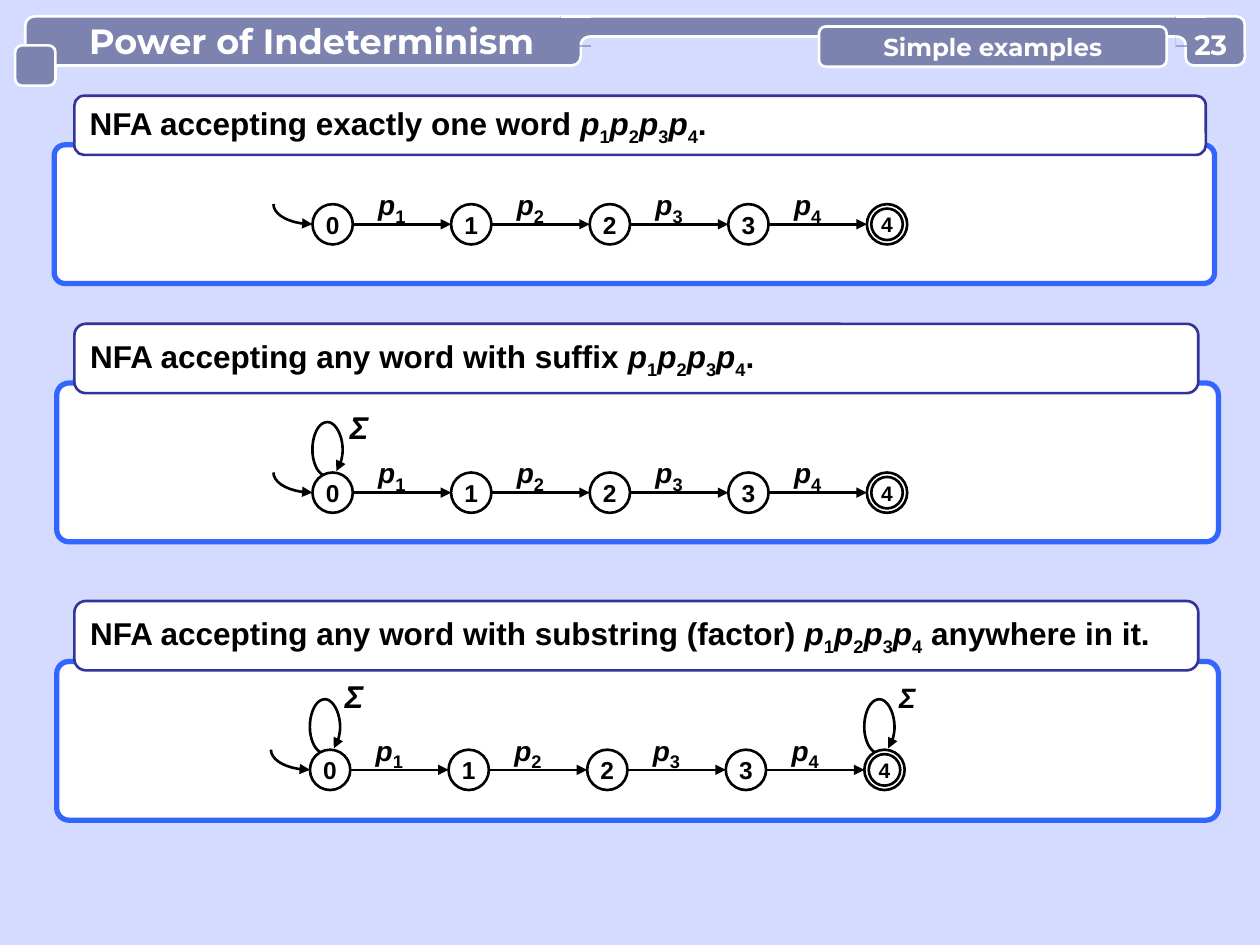
from lxml.etree import SubElement
from pptx import Presentation
from pptx.dml.color import RGBColor
from pptx.enum.shapes import MSO_CONNECTOR, MSO_SHAPE
from pptx.enum.text import MSO_ANCHOR, PP_ALIGN
from pptx.oxml.ns import qn
from pptx.util import Inches, Pt

BLACK = RGBColor(0x00, 0x00, 0x00)
WHITE = RGBColor(0xFF, 0xFF, 0xFF)
PALE = RGBColor(0xD5, 0xDA, 0xFF)
SLATE = RGBColor(0x7D, 0x83, 0xAF)
BLUE = RGBColor(0x33, 0x66, 0xFF)
NAVY = RGBColor(0x33, 0x33, 0x99)

BODY = {"name": "Arial", "bold": True, "color": BLACK}
HEAD = {"name": "Montserrat", "bold": True, "color": WHITE}
TIGHT = {"margin_left": 0, "margin_top": 0, "margin_right": 0, "margin_bottom": 0}
MIDDLE = {"vertical_anchor": MSO_ANCHOR.MIDDLE, "word_wrap": False}

RADIUS = 0.16
STEP = 1.1
STATES = 5
ENTRY = [(-0.16, 0), (-0.33, 0), (-0.47, -0.07), (-0.47, -0.16)]
LOOP = [(0.03, -0.17), (0.06, -0.21), (0.08, -0.28), (0.08, -0.34),
        (0.08, -0.46), (0.02, -0.56), (-0.04, -0.56),
        (-0.11, -0.56), (-0.16, -0.46), (-0.16, -0.34),
        (-0.16, -0.23), (-0.11, -0.13), (-0.04, -0.13)]


def format_all(target, values):
    for key, value in values.items():
        setattr(target, key, value)


def write(frame, runs, style, size, align=PP_ALIGN.CENTER, **layout):
    format_all(frame, layout)
    line = frame.paragraphs[0]
    line.alignment = align
    for text, kind in runs:
        run = line.add_run()
        run.text = text
        values = {**style, "size": Pt(size), "italic": kind == "var"}
        run.font.color.rgb = values.pop("color")
        format_all(run.font, values)
        if kind == "sub":
            run.font.size = Pt(18)
            run._r.get_or_add_rPr().set("baseline", "-25000")


def stroke(line, color, width=1.5):
    line.color.rgb = color
    line.width = Pt(width)


def arrow(shape, end):
    tip = SubElement(shape.line._get_or_add_ln(), qn(f"a:{end}"))
    tip.set("type", "triangle")


def block(host, kind, box, fill, edge=None, width=1.5, round=None):
    shape = host.add_shape(kind, *map(Inches, box))
    shape.shadow.inherit = False
    shape.fill.solid()
    shape.fill.fore_color.rgb = fill
    if edge is None:
        shape.line.fill.background()
    else:
        stroke(shape.line, edge, width)
    if round is not None:
        shape.adjustments[0] = round
    return shape


def link(host, start, end, color):
    line = host.add_connector(MSO_CONNECTOR.STRAIGHT, *map(Inches, start + end))
    stroke(line.line, color)
    SubElement(line.element.spPr, qn("a:effectLst"))
    return line


def bezier(points, count=10):
    result = [points[0]]
    for first in range(0, len(points) - 1, 3):
        a, b, c, d = points[first:first + 4]
        for n in range(1, count + 1):
            t = n / count
            u = 1 - t
            result.append(tuple(
                u**3 * a[k] + 3 * u * u * t * b[k] + 3 * u * t * t * c[k] + t**3 * d[k]
                for k in (0, 1)))
    return result


def outline(host, points, close=False):
    spots = [(Inches(x), Inches(y)) for x, y in points]
    pen = host.build_freeform(*spots[0])
    pen.add_line_segments(spots[1:], close=close)
    shape = pen.convert_to_shape()
    shape.shadow.inherit = False
    return shape


def curve(host, points, x, y, color):
    shape = outline(host, bezier([(x + dx, y + dy) for dx, dy in points]))
    shape.fill.background()
    stroke(shape.line, color)
    return shape


def label(host, box, runs, size):
    area = host.add_textbox(*map(Inches, box))
    write(area.text_frame, runs, BODY, size, word_wrap=True, **TIGHT)


def state(host, x, y, name, final):
    def disc(room, r):
        return block(room, MSO_SHAPE.OVAL, (x - r, y - r, 2 * r, 2 * r), WHITE, BLACK)

    if final:
        pair = host.add_group_shape().shapes
        disc(pair, RADIUS)
        shape = disc(pair, 0.125)
    else:
        shape = disc(host, RADIUS)
    write(shape.text_frame, [(name, "")], BODY, 12 if final else 14, **MIDDLE)


def chain(host, x, y, loops):
    arrow(curve(host, ENTRY, x, y, BLACK), "headEnd")
    for place, dx, dy, size in loops:
        spot = x + place * STEP
        arrow(curve(host, LOOP, spot, y, BLACK), "headEnd")
        label(host, (spot + dx - 0.16, y + dy - 0.15, 0.32, 0.3), [("Σ", "var")], size)
    for n in range(STATES):
        spot = x + n * STEP
        final = n == STATES - 1
        if not final:
            label(host, (spot + 0.31, y - 0.32, 0.32, 0.32),
                  [("p", "var"), (str(n + 1), "sub")], 16)
            line = link(host, (spot + RADIUS, y), (spot + STEP - RADIUS, y), BLACK)
            arrow(line, "tailEnd")
        state(host, spot, y, str(n), final)


def scene(host, panel, bar, lead, tail, start, loops):
    block(host, MSO_SHAPE.ROUNDED_RECTANGLE, panel, WHITE, BLUE, 3, 0.077)
    head = block(host, MSO_SHAPE.ROUNDED_RECTANGLE, bar, WHITE, NAVY, round=0.165)
    word = [part for n in range(1, STATES) for part in (("p", "var"), (str(n), "sub"))]
    write(head.text_frame, [(lead, ""), *word, (tail, "")], BODY, 18,
          PP_ALIGN.LEFT, **MIDDLE)
    chain(host, *start, loops)


def joint(host, x, y, side):
    group = host.add_group_shape().shapes
    inner = x - 0.24 * side
    block(group, MSO_SHAPE.RECTANGLE, (min(x, inner), y, 0.24, 0.24), SLATE)
    link(group, (inner, y), (x, y), WHITE)
    bend = [(0, 0.16), (-0.05 * side, 0.16), (-0.08 * side, 0.19), (-0.08 * side, 0.23)]
    wedge = bezier([(x + dx, y + dy) for dx, dy in bend]) + [(x, y + 0.23)]
    patch = outline(group, wedge, close=True)
    patch.fill.solid()
    patch.fill.fore_color.rgb = PALE
    patch.line.fill.background()
    curve(group, bend, x, y, WHITE)


def banner(slide, x, y):
    host = slide.shapes

    def tab(box, round=0.17):
        left, top, width, height = box
        return block(host, MSO_SHAPE.ROUNDED_RECTANGLE,
                     (x + left, y + top, width, height), SLATE, WHITE, round=round)

    plate = tab((0, 0, 4.41, 0.39), 0.188)
    title = host.title
    plate.element.addnext(title.element)
    place = zip(("left", "top", "width", "height"),
                map(Inches, (x + 0.14, y, 4.27, 0.39)))
    format_all(title, dict(place))
    write(title.text_frame, [("Power of Indeterminism", "")], HEAD, 20, **MIDDLE)
    tab((4.41, 0, 4.88, 0.16), 0.5)
    joint(host, x + 4.49, y, 1)
    tab((-0.08, 0.23, 0.32, 0.32))
    tab((9.21, 0, 0.47, 0.39))
    joint(host, x + 9.13, y, -1)
    topic = tab((6.3, 0.08, 2.76, 0.32))
    write(topic.text_frame, [("Simple examples", "")], HEAD, 14, **MIDDLE)
    page = host.add_textbox(*map(Inches, (x + 9.21, y + 0.09, 0.4, 0.27)))
    write(page.text_frame, [("23", "")], HEAD, 16, **TIGHT, **MIDDLE)


def main():
    deck = Presentation()
    deck.slide_width, deck.slide_height = Inches(10), Inches(7.5)
    slide = deck.slides.add_slide(deck.slide_layouts[5])
    slide.background.fill.solid()
    slide.background.fill.fore_color.rgb = PALE
    scenes = [
        ((0.43, 1.15, 9.21, 1.1), (0.59, 0.76, 8.98, 0.47),
         "NFA accepting exactly one word ", ".", (2.64, 1.78), []),
        ((0.45, 3.04, 9.22, 1.26), (0.59, 2.57, 8.92, 0.55),
         "NFA accepting any word with suffix ", ".", (2.64, 3.91),
         [(0, 0.21, -0.52, 18)]),
        ((0.45, 5.25, 9.22, 1.26), (0.59, 4.77, 8.92, 0.55),
         "NFA accepting any word with substring (factor) ", " anywhere in it.",
         (2.62, 6.11), [(0, 0.19, -0.59, 18), (4, 0.18, -0.56, 16)]),
    ]
    for parts in scenes:
        scene(slide.shapes, *parts)
    banner(slide, 0.2, 0.13)
    deck.save("out.pptx")


if __name__ == "__main__":
    main()
